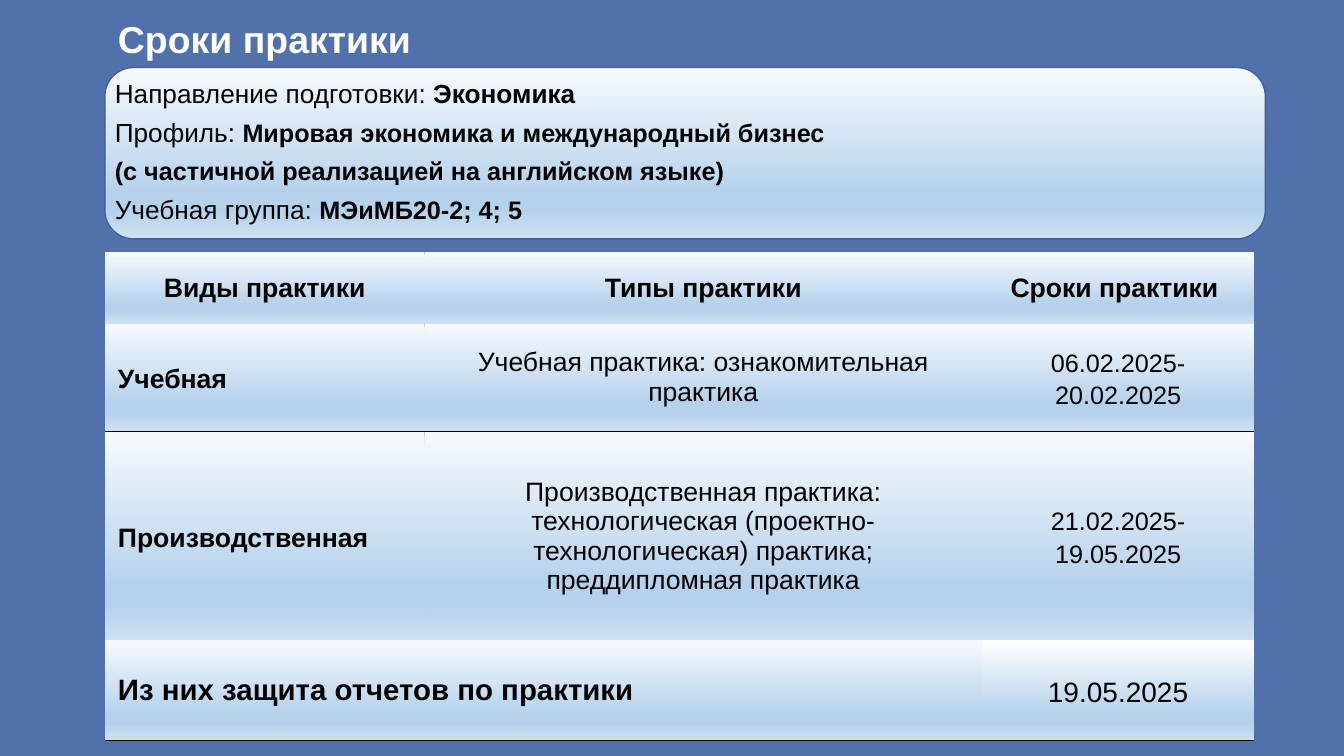
from lxml.etree import SubElement
from pptx import Presentation
from pptx.dml.color import RGBColor
from pptx.enum.shapes import MSO_SHAPE
from pptx.enum.text import MSO_ANCHOR, MSO_AUTO_SIZE, PP_ALIGN
from pptx.oxml.ns import qn
from pptx.util import Inches, Pt

LEFT = 1.04
NO_STYLE = "{2D5ABB26-0587-4C30-8999-92F81FD0307C}"
WIDE = (0.13, 0.13)
NARROW = (0.1, 0)


def color(value):
    return RGBColor.from_string(value)


class SlideBuilder:
    font = "Arial"
    ink = "000000"
    light = "F7FAFD"

    def __init__(self, deck, background):
        self.page = deck.slides.add_slide(deck.slide_layouts[5])
        self.page.background.fill.solid()
        self.page.background.fill.fore_color.rgb = color(background)

    def place(self, box):
        return [Inches(length) for length in box]

    def format_span(self, span, size, bold, ink=None):
        span.font.name = self.font
        span.font.size = Pt(size)
        span.font.bold = bold
        span.font.color.rgb = color(ink or self.ink)

    def gradient(self, fill, properties, top):
        fill.gradient()
        gradient = properties.find(qn("a:gradFill"))
        gradient.find(qn("a:lin")).set("ang", "5400000")
        stops = gradient.find(qn("a:gsLst"))
        for stop in list(stops):
            stops.remove(stop)
        for position, value in ((0, top), (74, "B5D2EC"), (83, "B5D2EC"), (100, "CEE1F2")):
            stop = SubElement(stops, qn("a:gs"), pos=str(position * 1000))
            SubElement(stop, qn("a:srgbClr"), val=value)

    def title(self, text, box, size):
        shape = self.page.shapes.title
        shape.left, shape.top, shape.width, shape.height = self.place(box)
        frame = shape.text_frame
        frame.text = text
        frame.vertical_anchor = MSO_ANCHOR.MIDDLE
        frame.margin_left = frame.margin_right = Inches(0.13)
        frame.margin_top = frame.margin_bottom = Inches(0.13)
        para = frame.paragraphs[0]
        para.alignment = PP_ALIGN.LEFT
        para.line_spacing = 1.25
        self.format_span(para.runs[0], size, True, "FFFFFF")

    def panel(self, box, outline):
        shape = self.page.shapes.add_shape(MSO_SHAPE.ROUNDED_RECTANGLE, *self.place(box))
        shape.shadow.inherit = False
        self.gradient(shape.fill, shape.fill._xPr, self.light)
        shape.line.color.rgb = color(outline)
        shape.line.width = Pt(1)

    def details(self, box, lines):
        frame = self.page.shapes.add_textbox(*self.place(box)).text_frame
        frame.word_wrap = True
        frame.auto_size = MSO_AUTO_SIZE.SHAPE_TO_FIT_TEXT
        for index, (label, value) in enumerate(lines):
            para = frame.add_paragraph() if index else frame.paragraphs[0]
            para.line_spacing = 1.25
            for text, size, bold in ((label, 18.7, False), (value, 18, index > 0)):
                if text:
                    span = para.add_run()
                    span.text = text
                    is_value = text == value
                    self.format_span(span, size if index or not is_value else 18.7, is_value or bold)

    def border(self, properties, side):
        line = properties.makeelement(qn(f"a:{side}"), {"w": str(Pt(1))})
        fill = SubElement(line, qn("a:solidFill"))
        SubElement(fill, qn("a:srgbClr"), val=self.ink)
        properties.insert(0, line)

    def cell(self, cell, text, size, bold=False, centered=True, spacing=1.0,
             margins=WIDE, top=None, borders=()):
        cell.text_frame.text = text
        cell.vertical_anchor = MSO_ANCHOR.MIDDLE
        cell.margin_left = cell.margin_right = Inches(margins[0])
        cell.margin_top = cell.margin_bottom = Inches(margins[1])
        for para in cell.text_frame.paragraphs:
            para.alignment = PP_ALIGN.CENTER if centered else PP_ALIGN.LEFT
            para.line_spacing = spacing
            for span in para.runs:
                self.format_span(span, size, bold)
        properties = cell._tc.get_or_add_tcPr()
        self.gradient(cell.fill, properties, top or self.light)
        for side in borders:
            self.border(properties, side)

    def table(self, top, widths, heights, rows, borders):
        box = (LEFT, top, sum(widths), sum(heights))
        table = self.page.shapes.add_table(len(heights), len(widths), *self.place(box)).table
        table.first_row = table.horz_banding = False
        table._tbl.tblPr.find(qn("a:tableStyleId")).text = NO_STYLE
        for column, width in zip(table.columns, widths):
            column.width = Inches(width)
        for row, height, contents, sides in zip(table.rows, heights, rows, borders):
            row.height = Inches(height)
            for cell, (text, style) in zip(row.cells, contents):
                self.cell(cell, text, borders=sides, **style)


def main():
    deck = Presentation()
    deck.slide_width, deck.slide_height = Inches(13.33), Inches(7.5)
    slide = SlideBuilder(deck, "5171AC")
    slide.title("Сроки практики", (LEFT, -0.12, 11.23, 0.89), 26.7)
    slide.panel((LEFT, 0.67, 11.51, 1.7), "435D9A")
    slide.details((LEFT, 0.64, 12.29, 1.66), [
        ("Направление подготовки: ", "Экономика"),
        ("Профиль: ", "Мировая экономика и международный бизнес"),
        ("", "(с частичной реализацией на английском языке)"),
        ("Учебная группа: ", "МЭиМБ20-2; 4; 5"),
    ])

    header = dict(size=19, bold=True)
    kind = dict(size=19, bold=True, centered=False, spacing=1.14)
    detail = dict(size=19, margins=NARROW)
    dates = dict(size=18, spacing=1.14)
    slide.table(2.5, (3.17, 5.53, 2.7), (0.71, 1.07, 2.08), [
        [("Виды практики", header), ("Типы практики", header), ("Сроки практики ", header)],
        [("Учебная", kind),
         ("Учебная практика: ознакомительная практика", detail),
         ("06.02.2025-20.02.2025", dates)],
        [("Производственная", kind),
         ("Производственная практика: технологическая (проектно-технологическая) практика;\n"
          "преддипломная практика", detail),
         ("21.02.2025-19.05.2025", dates)],
    ], [(), ("lnB",), ("lnB", "lnT")])

    defence = dict(size=21, bold=True, centered=False)
    deadline = dict(size=20, spacing=1.14, margins=NARROW, top="FFFFFF")
    slide.table(6.35, (8.7, 2.7), (1,), [
        [("Из них защита отчетов по практики", defence), ("19.05.2025", deadline)],
    ], [("lnB",)])
    deck.save("out.pptx")


if __name__ == "__main__":
    main()
